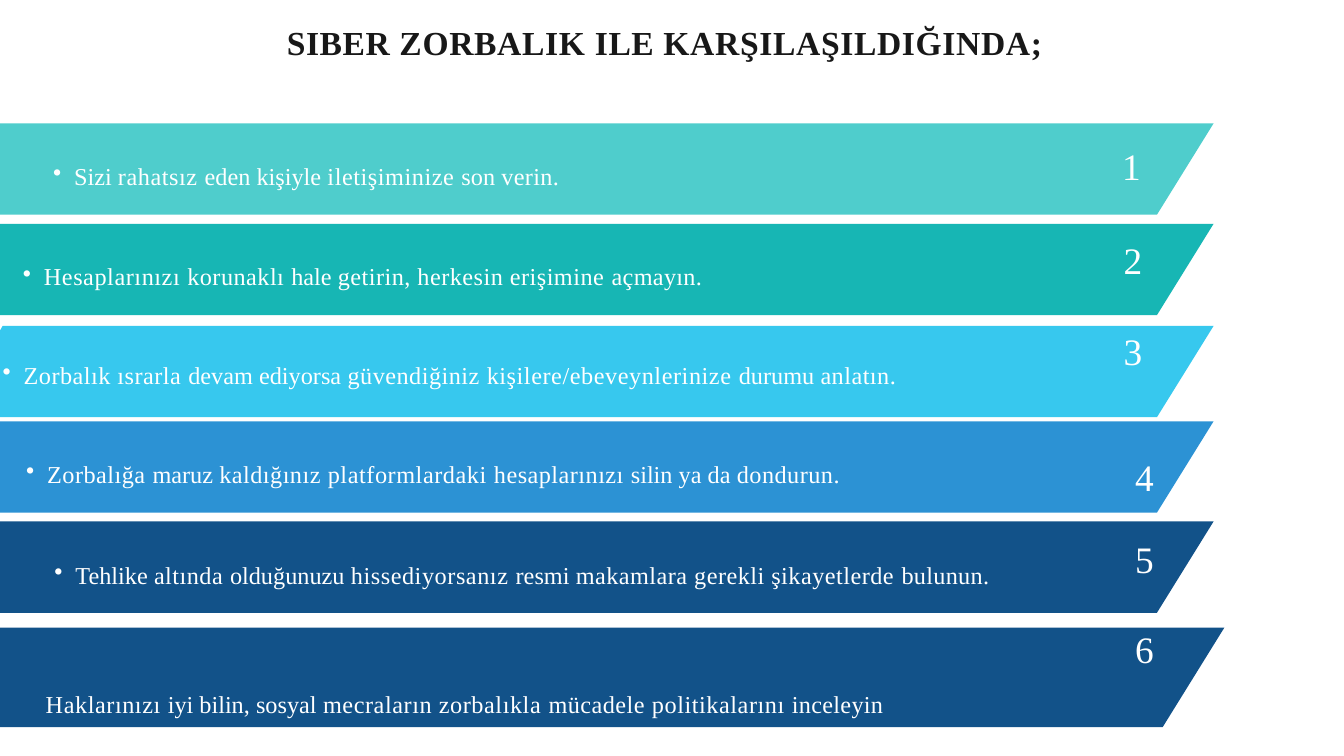
"""Build a slide of six numbered steps to take against cyberbullying."""
import lxml.etree
import pptx
import pptx.dml.color
import pptx.enum.text
import pptx.oxml.ns
import pptx.util

Pt = pptx.util.Pt
RGBColor = pptx.dml.color.RGBColor

FONT = "Times New Roman"
WHITE = RGBColor(0xFF, 0xFF, 0xFF)
INK = RGBColor(0x18, 0x18, 0x18)
AQUA = RGBColor(0x4F, 0xCD, 0xCC)
TEAL = RGBColor(0x17, 0xB6, 0xB4)
SKY = RGBColor(0x37, 0xC8, 0xEE)
BLUE = RGBColor(0x2C, 0x92, 0xD4)
NAVY = RGBColor(0x12, 0x52, 0x89)

BAND_HEIGHT = 97.9
BAND_RIGHT = 1300.3
SLANT_RATIO = 0.62
BULLET_INDENT = 22.5

HEADING = [("SIBER ", 0.6), ("ZORBALIK ", 0.7), ("ILE ", 0.6), ("KARŞILAŞILDIĞINDA;", 0.7)]

STEPS = [
    dict(
        band=dict(top=132.2, color=AQUA), number=(1202.4, 151.9), box=(56.9, 172.1, 565.2),
        runs=[("Sizi ", 0), ("rahatsız ", 0.6), ("eden kişiyle ", 0),
              ("iletişiminize ", 0.6), ("son ", 0), ("verin.", 0.4)]),
    dict(
        band=dict(top=239.8, color=TEAL), number=(1203.8, 252.7), box=(24.5, 279.4, 745.2),
        runs=[("Hesaplarınızı ", 0.6), ("korunaklı ", 0.5), ("hale ", 0),
              ("getirin, herkesin erişimine ", 0.5), ("açmayın.", 0.3)]),
    dict(
        band=dict(top=349.2, color=SKY, notch=(2.9, 5)), number=(1203.8, 350.6),
        box=(2.9, 385.2, 988.6),
        runs=[("Zorbalık ısrarla ", 0.5), ("devam ediyorsa ", 0), ("güvendiğiniz ", 0.5),
              ("kişilere/ebeveynlerinize ", 0.6), ("durumu ", 0), ("anlatın.", 0.5)]),
    dict(
        band=dict(top=451.4, color=BLUE), number=(1216.1, 486), box=(28.1, 491, 900),
        runs=[("Zorbalığa ", 0.5), ("maruz ", 0), ("kaldığınız ", 0.5), ("platformlardaki ", 0.6),
              ("hesaplarınızı ", 0.5), ("silin ya da ", 0), ("dondurun.", 0.5)]),
    dict(
        band=dict(top=558.7, color=NAVY), number=(1216.1, 573.1), box=(58.3, 599, 1034.6),
        runs=[("Tehlike ", 0), ("altında ", 0.5), ("olduğunuzu ", 0), ("hissediyorsanız ", 0.6),
              ("resmi ", 0), ("makamlara gerekli şikayetlerde ", 0.5), ("bulunun.", 0.3)]),
    dict(
        band=dict(top=672.5, color=NAVY, height=106.6, right=1311.8), number=(1216.1, 669.6),
        box=(49, 737.3, 924.5), bullet=False,
        runs=[("Haklarınızı ", 0.6), ("iyi bilin, sosyal ", 0), ("mecraların zorbalıkla ", 0.6),
              ("mücadele ", 0.5), ("politikalarını ", 0.6), ("inceleyin", 0.3)]),
]


def add_band(slide, top, color, height=BAND_HEIGHT, right=BAND_RIGHT, notch=None):
    """Draw a band from the left edge with a slanted right end."""
    bottom = top + height
    corners = [(notch[0], top), (0, top + notch[1])] if notch else [(0, top)]
    corners += [(0, bottom), (right - height * SLANT_RATIO, bottom)]
    builder = slide.shapes.build_freeform(Pt(right), Pt(top))
    builder.add_line_segments([(Pt(x), Pt(y)) for x, y in corners], close=True)
    shape = builder.convert_to_shape()
    shape.shadow.inherit = False
    shape.fill.solid()
    shape.fill.fore_color.rgb = color
    shape.line.fill.background()


def set_bullet(paragraph):
    """Give a paragraph a hanging round bullet."""
    properties = paragraph._p.get_or_add_pPr()
    properties.set("marL", str(Pt(BULLET_INDENT)))
    properties.set("indent", str(-Pt(BULLET_INDENT)))
    bullet = lxml.etree.SubElement(properties, pptx.oxml.ns.qn("a:buChar"))
    bullet.set("char", "•")


def write_text(shape, runs, size, color=WHITE, bold=False, before=0.9, bullet=False):
    """Fill a shape with one paragraph of (text, letter spacing) runs."""
    frame = shape.text_frame
    frame.word_wrap = True
    frame.auto_size = pptx.enum.text.MSO_AUTO_SIZE.SHAPE_TO_FIT_TEXT
    frame.vertical_anchor = pptx.enum.text.MSO_ANCHOR.TOP
    frame.margin_left = frame.margin_right = frame.margin_bottom = 0
    frame.margin_top = Pt(1)
    paragraph = frame.paragraphs[0]
    paragraph.alignment = pptx.enum.text.PP_ALIGN.LEFT
    paragraph.space_before = Pt(before)
    if bullet:
        set_bullet(paragraph)
    for text, spacing in runs:
        run = paragraph.add_run()
        run.text = text
        run.font.name = FONT
        run.font.size = Pt(size)
        run.font.bold = bold
        run.font.color.rgb = color
        run._r.get_or_add_rPr().set("spc", str(round(spacing * 100)))


def add_heading(slide):
    """Place the slide heading in the title placeholder."""
    title = slide.shapes.title
    title.left, title.top, title.width, title.height = Pt(307.4), Pt(22.3), Pt(823), Pt(45.4)
    write_text(title, HEADING, size=36, color=INK, bold=True, before=1)


def add_label(slide, left, top, width, height, runs, **text_format):
    """Add a text box holding one formatted paragraph."""
    box = slide.shapes.add_textbox(Pt(left), Pt(top), Pt(width), Pt(height))
    write_text(box, runs, **text_format)


def add_step(slide, number, step):
    """Add one band with its sentence and number."""
    add_band(slide, **step["band"])
    add_label(slide, *step["box"], 33.1, step["runs"], size=26, bullet=step.get("bullet", True))
    add_label(slide, *step["number"], 22.3, 50.4, [(str(number), -0.5)], size=40, before=1.1)


def main():
    """Build and save the presentation."""
    presentation = pptx.Presentation()
    presentation.slide_width, presentation.slide_height = Pt(1440), Pt(810)
    slide = presentation.slides.add_slide(presentation.slide_layouts.get_by_name("Title Only"))
    add_heading(slide)
    for number, step in enumerate(STEPS, start=1):
        add_step(slide, number, step)
    presentation.save("out.pptx")


if __name__ == "__main__":
    main()
